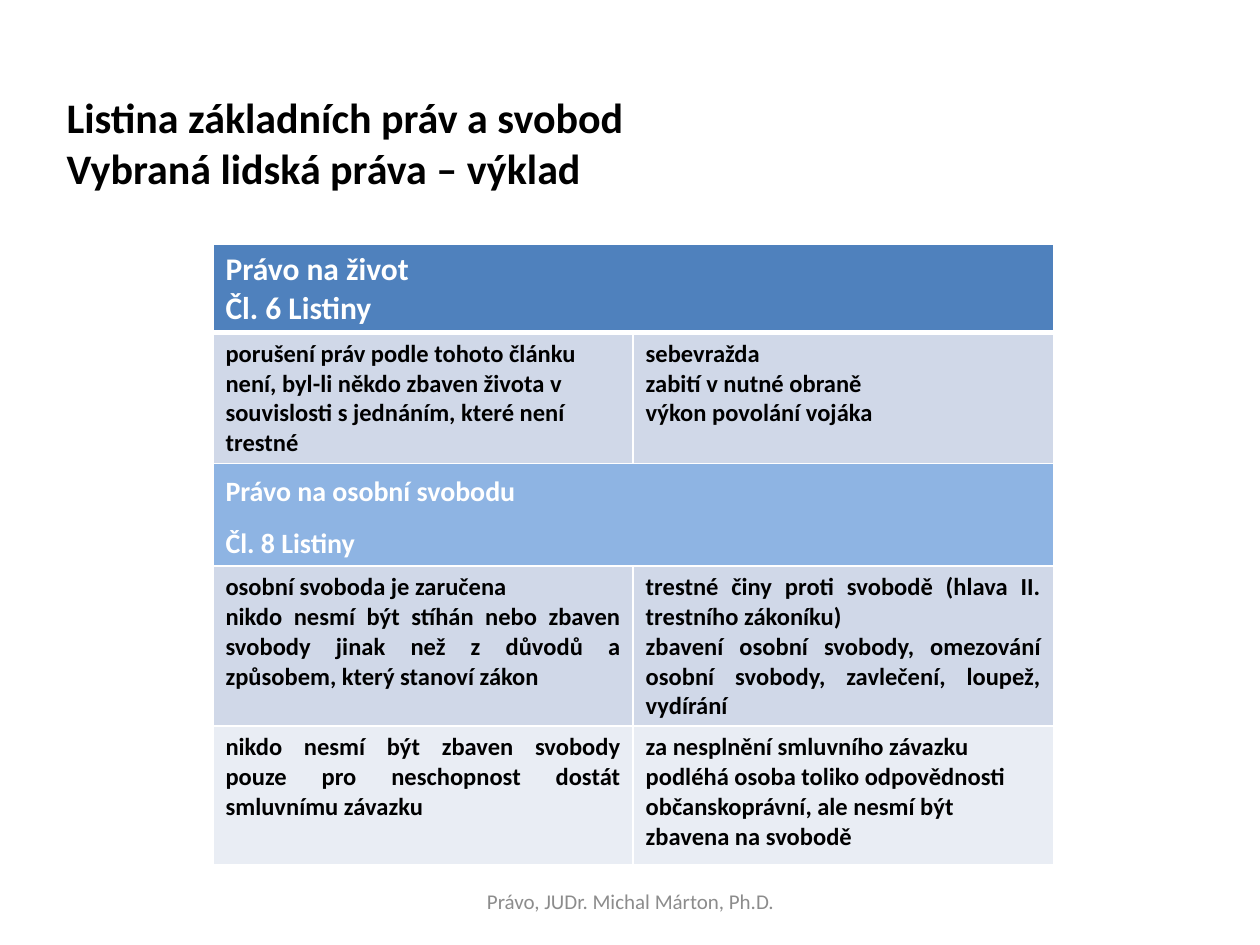
import pptx
import pptx.util
import pptx.dml.color
import pptx.enum.text
import pptx.oxml
import pptx.oxml.ns
from pptx.util import Inches

FONT = "Calibri"
COLORS = {
    "text": "000000",
    "white": "FFFFFF",
    "foot": "8C8C8C",
    "head": "4F81BD",
    "part": "8EB4E3",
    "band": "D0D8E8",
    "pale": "E9EDF4",
}
LEFT = pptx.enum.text.PP_ALIGN.LEFT
CENTER = pptx.enum.text.PP_ALIGN.CENTER
FULL = pptx.enum.text.PP_ALIGN.JUSTIFY
TOP = pptx.enum.text.MSO_ANCHOR.TOP
MIDDLE = pptx.enum.text.MSO_ANCHOR.MIDDLE

# Each row: height, fill, text colour, size, cells as (alignment, lines);
# a row with one cell spans the whole table
ROWS = [
    (0.69, "head", "white", 18, [(LEFT, ["Právo na život", "Čl. 6 Listiny"])]),
    (1.04, "band", "text", 14, [
        (LEFT, ["porušení práv podle tohoto článku není, byl-li někdo zbaven "
                "života v souvislosti s jednáním, které není trestné"]),
        (LEFT, ["sebevražda", "zabití v nutné obraně",
                "výkon povolání vojáka"]),
    ]),
    (0.81, "part", "white", 16,
     [(LEFT, ["Právo na osobní svobodu", "Čl. 8 Listiny"])]),
    (1.27, "band", "text", 14, [
        (FULL, ["osobní svoboda je zaručena",
                "nikdo nesmí být stíhán nebo zbaven svobody jinak než "
                "z důvodů a způsobem, který stanoví zákon"]),
        (FULL, ["trestné činy proti svobodě (hlava II. trestního zákoníku)",
                "zbavení osobní svobody, omezování osobní svobody, "
                "zavlečení, loupež, vydírání"]),
    ]),
    (1.10, "pale", "text", 14, [
        (FULL, ["nikdo nesmí být zbaven svobody pouze pro neschopnost dostát "
                "smluvnímu závazku"]),
        (LEFT, ["za nesplnění smluvního závazku podléhá osoba toliko "
                "odpovědnosti občanskoprávní, ale nesmí být zbavena "
                "na svobodě"]),
    ]),
]


def color(name):
    return pptx.dml.color.RGBColor.from_string(COLORS[name])


def write(frame, lines, size, tint, align=LEFT, bold=True):
    frame.text = "\n".join(lines)
    for para in frame.paragraphs:
        para.alignment = align
        for run in para.runs:
            run.font.name = FONT
            run.font.size = pptx.util.Pt(size)
            run.font.bold = bold
            run.font.color.rgb = color(tint)


def add_text(slide, place, lines, size, tint, align, bold, anchor):
    box = slide.shapes.add_textbox(*map(Inches, place))
    frame = box.text_frame
    frame.word_wrap = True
    frame.vertical_anchor = anchor
    write(frame, lines, size, tint, align, bold)


def add_edges(cell, widths):
    props = cell._tc.get_or_add_tcPr()
    for side, width in widths.items():
        props.append(pptx.oxml.parse_xml(
            f'<a:{side} {pptx.oxml.ns.nsdecls("a")} w="{pptx.util.Pt(width)}">'
            f'<a:solidFill><a:srgbClr val="{COLORS["white"]}"/></a:solidFill>'
            f'</a:{side}>'))


def add_rights(slide):
    high = sum(row[0] for row in ROWS)
    place = map(Inches, (1.69, 1.94, 6.67, high))
    table = slide.shapes.add_table(len(ROWS), 2, *place).table
    table.first_row = table.horz_banding = False

    for r, (height, fill, tint, size, cells) in enumerate(ROWS):
        table.rows[r].height = Inches(height)
        # A thick rule parts the heading from the body
        edges = {"lnL": 1, "lnR": 1, "lnT": 3 if r == 1 else 1,
                 "lnB": 3 if r == 0 else 1}
        for c in range(2):
            cell = table.cell(r, c)
            add_edges(cell, edges)
            cell.fill.solid()
            cell.fill.fore_color.rgb = color(fill)
        if len(cells) == 1:
            table.cell(r, 0).merge(table.cell(r, 1))
        for c, (align, lines) in enumerate(cells):
            write(table.cell(r, c).text_frame, lines, size, tint, align)

    # The second heading is set wider
    first = table.cell(2, 0).text_frame.paragraphs[0]
    first.alignment = FULL
    first.line_spacing = 1.15
    first.space_after = pptx.util.Pt(10)


def main():
    deck = pptx.Presentation()
    deck.slide_width, deck.slide_height = Inches(10), Inches(7.5)
    slide = deck.slides.add_slide(deck.slide_layouts[6])

    # Footer
    add_text(slide, (3.42, 6.95, 3.17, 0.4),
             ["Právo, JUDr. Michal Márton, Ph.D."],
             12, "foot", CENTER, False, MIDDLE)
    # Title
    add_text(slide, (0.43, 0.68, 9.06, 1.51),
             ["Listina základních práv a svobod",
              "Vybraná lidská práva – výklad"],
             24, "text", LEFT, True, TOP)
    # Table of rights
    add_rights(slide)

    deck.save("out.pptx")


if __name__ == "__main__":
    main()
